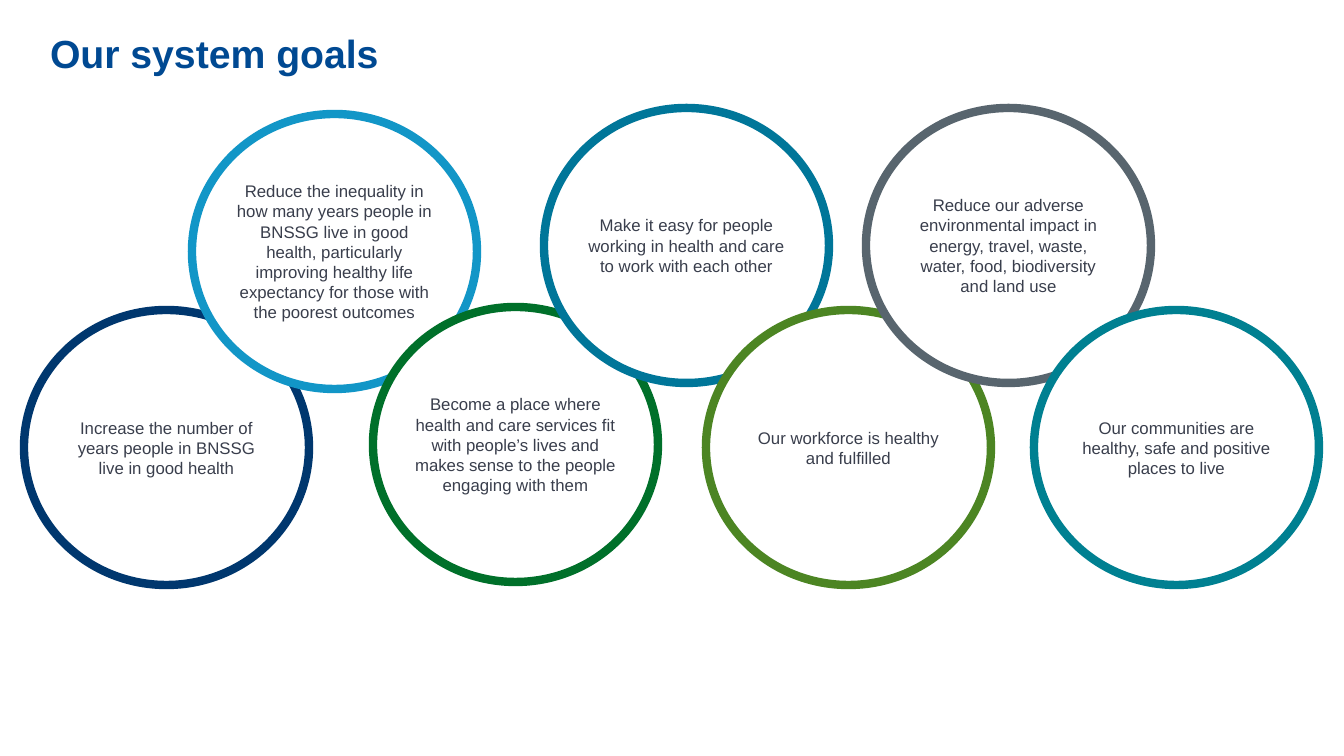
from pptx import Presentation
from pptx.dml.color import RGBColor
from pptx.enum.shapes import MSO_SHAPE
from pptx.enum.text import MSO_ANCHOR, MSO_AUTO_SIZE, PP_ALIGN
from pptx.util import Emu, Pt

COLOURS = {
    "title": "004992", "text": "393E4C", "white": "FFFFFF",
    "navy": "00376E", "sky": "1296C7", "green": "00702A", "blue": "007699",
    "olive": "4C8523", "grey": "58656E", "teal": "008091",
}
CIRCLE_WIDTH, CIRCLE_HEIGHT = 285, 275

# Goals from back to front: left, top, ring colour, wording
GOALS = [
    (24, 310, "navy", "Increase the number of years people in BNSSG live in good health"),
    (192, 114, "sky", "Reduce the inequality in how many years people in BNSSG live in good "
                      "health, particularly improving healthy life expectancy for those "
                      "with the poorest outcomes"),
    (373, 307, "green", "Become a place where health and care services fit with people’s "
                        "lives and makes sense to the people engaging with them"),
    (544, 108, "blue", "Make it easy for people working in health and care to work with "
                       "each other"),
    (706, 310, "olive", "Our workforce is healthy and fulfilled"),
    (866, 108, "grey", "Reduce our adverse environmental impact in energy, travel, waste, "
                       "water, food, biodiversity and land use"),
    (1034, 310, "teal", "Our communities are healthy, safe and positive places to live"),
]


def px(length):
    return Emu(round(length * 914400 / 100.8))


def write(shape, text, size, colour, align, anchor, side, top, bold=False):
    frame = shape.text_frame
    frame.word_wrap = True
    frame.auto_size = MSO_AUTO_SIZE.NONE
    frame.vertical_anchor = anchor
    frame.margin_left = frame.margin_right = px(side)
    frame.margin_top, frame.margin_bottom = px(top), px(5)
    para = frame.paragraphs[0]
    para.alignment = align
    span = para.add_run()
    span.text = text
    span.font.name = "Arial"
    span.font.size = Pt(size)
    span.font.bold = bold
    span.font.color.rgb = RGBColor.from_string(COLOURS[colour])
    return para


deck = Presentation()
deck.slide_width, deck.slide_height = px(1344), px(756)
page = deck.slides.add_slide(deck.slide_layouts[5])

# Title
title = page.shapes.title
title.left, title.top, title.width, title.height = px(26), px(20), px(1171), px(134)
heading = write(title, "Our system goals", 28, "title", PP_ALIGN.LEFT,
                MSO_ANCHOR.TOP, 24, 15, bold=True)
heading.line_spacing = 0.9

# Overlapping goal circles
for left, top, ring, wording in GOALS:
    circle = page.shapes.add_shape(MSO_SHAPE.OVAL, px(left), px(top),
                                   px(CIRCLE_WIDTH), px(CIRCLE_HEIGHT))
    circle.shadow.inherit = False
    circle.fill.solid()
    circle.fill.fore_color.rgb = RGBColor.from_string(COLOURS["white"])
    circle.line.color.rgb = RGBColor.from_string(COLOURS[ring])
    circle.line.width = Pt(6)
    write(circle, wording, 12, "text", PP_ALIGN.CENTER, MSO_ANCHOR.MIDDLE, 0, 5)

deck.save("out.pptx")
